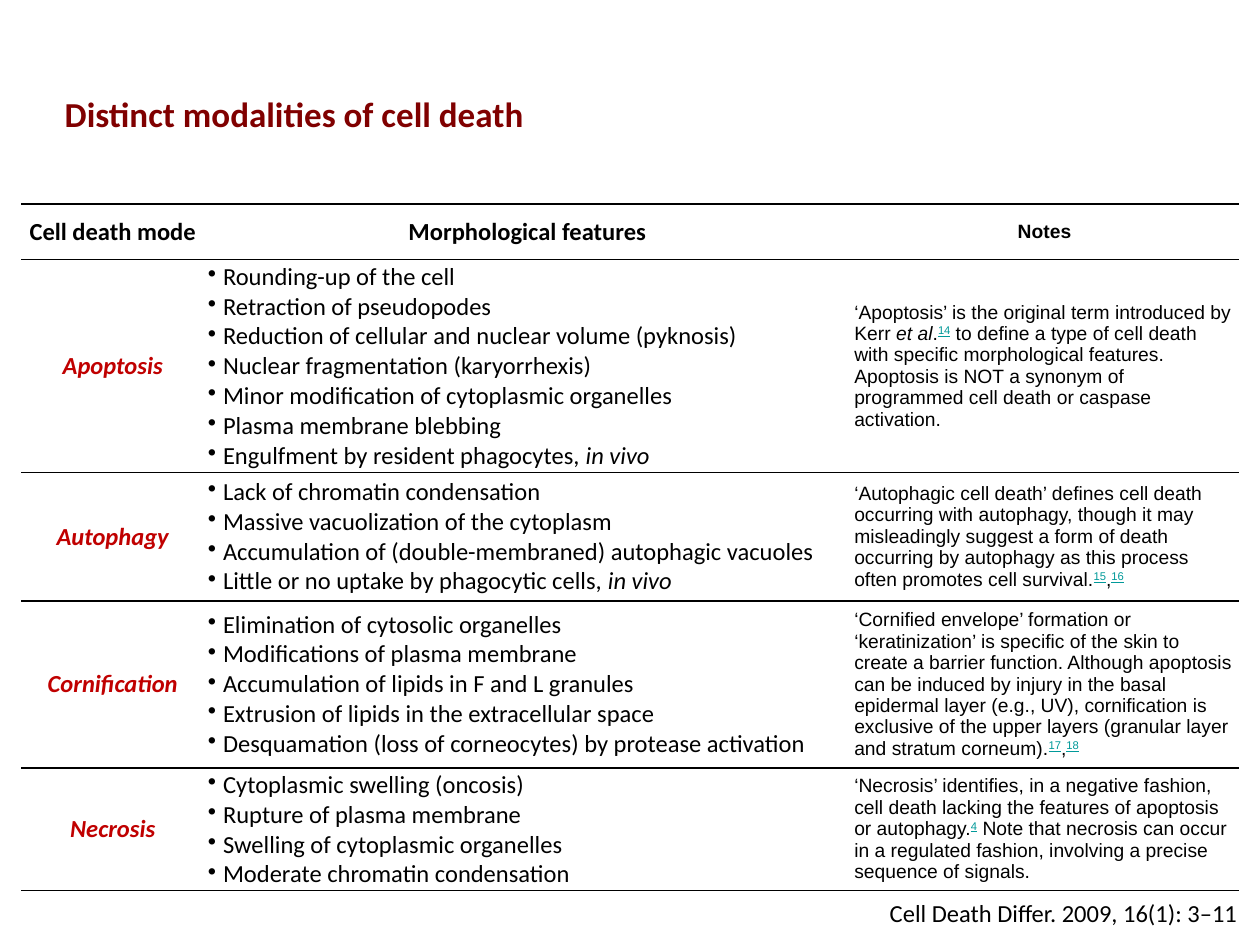
from dataclasses import dataclass

from lxml import etree
from pptx import Presentation
from pptx import util as u
from pptx.dml.color import RGBColor
from pptx.enum import text as t
from pptx.oxml import ns


@dataclass(frozen=True)
class Theme:
    """Colours, fonts and type sizes of the slide."""
    ink: str = "000000"
    title: str = "800000"
    mode: str = "C00000"
    link: str = "009999"
    main: str = "Calibri"
    note: str = "Arial"
    big: int = 20
    body: int = 14
    small: int = 11


THEME = Theme()
HEADS = ["Cell death mode", "Morphological features", "Notes"]
COLS = [1.45, 5.13, 3.08]
ROWS = [0.44, 1.69, 1.02, 1.26, 0.93]
MODES = [
    ("Apoptosis",
     ["Rounding-up of the cell",
      "Retraction of pseudopodes",
      "Reduction of cellular and nuclear volume (pyknosis)",
      "Nuclear fragmentation (karyorrhexis)",
      "Minor modification of cytoplasmic organelles",
      "Plasma membrane blebbing",
      "Engulfment by resident phagocytes, |_in vivo"],
     "‘Apoptosis’ is the original term introduced by Kerr |_et al|.|^14"
     "| to define a type of cell death with specific morphological features. "
     "Apoptosis is NOT a synonym of programmed cell death or caspase activation."),
    ("Autophagy",
     ["Lack of chromatin condensation",
      "Massive vacuolization of the cytoplasm",
      "Accumulation of (double-membraned) autophagic vacuoles",
      "Little or no uptake by phagocytic cells, |_in vivo"],
     "‘Autophagic cell death’ defines cell death occurring with autophagy, "
     "though it may misleadingly suggest a form of death occurring by autophagy "
     "as this process often promotes cell survival.|^15|,|^16"),
    ("Cornification",
     ["Elimination of cytosolic organelles",
      "Modifications of plasma membrane",
      "Accumulation of lipids in F and L granules",
      "Extrusion of lipids in the extracellular space",
      "Desquamation (loss of corneocytes) by protease activation"],
     "‘Cornified envelope’ formation or ‘keratinization’ is specific of the skin "
     "to create a barrier function. Although apoptosis can be induced by injury "
     "in the basal epidermal layer (e.g., UV), cornification is exclusive of the "
     "upper layers (granular layer and stratum corneum).|^17|,|^18"),
    ("Necrosis",
     ["Cytoplasmic swelling (oncosis)",
      "Rupture of plasma membrane",
      "Swelling of cytoplasmic organelles",
      "Moderate chromatin condensation"],
     "‘Necrosis’ identifies, in a negative fashion, cell death lacking the "
     "features of apoptosis or autophagy.|^4| Note that necrosis can occur in a "
     "regulated fashion, involving a precise sequence of signals."),
]


def style(para, face, size, color, bold=False, italic=False, align=t.PP_ALIGN.LEFT):
    """Set the font and alignment of a paragraph."""
    font = para.font
    font.name, font.size, font.bold, font.italic = face, u.Pt(size), bold, italic
    font.color.rgb = RGBColor.from_string(color)
    para.alignment = align


def write(para, words):
    """Add runs split at bars; _ marks italics and ^ a reference."""
    for part in words.split("|"):
        run = para.add_run()
        run.text = part.lstrip("_^")
        if part.startswith("_"):
            run.font.italic = True
        elif part.startswith("^"):
            run.font.underline = True
            run.font.color.rgb = RGBColor.from_string(THEME.link)
            run.font._element.set("baseline", "30000")


def bullet(para):
    """Give a paragraph a hanging bullet."""
    props = para._p.get_or_add_pPr()
    props.set("marL", str(u.Inches(0.12)))
    props.set("indent", str(u.Inches(-0.12)))
    mark = etree.Element(ns.qn("a:buChar"), char="•")
    props.insert_element_before(mark, "a:tabLst", "a:defRPr", "a:extLst")


def frame(cell):
    """Rule a cell above and below, and clear its fill."""
    cell.fill.background()
    cell.vertical_anchor = t.MSO_ANCHOR.MIDDLE
    cell.margin_left = cell.margin_right = u.Inches(0.03)
    cell.margin_top = cell.margin_bottom = u.Inches(0.02)
    props = cell._tc.get_or_add_tcPr()
    for spot, side in enumerate("LRTB"):
        line = etree.Element(ns.qn("a:ln" + side), w=str(u.Pt(1)))
        if side in "TB":
            fill = etree.SubElement(line, ns.qn("a:solidFill"))
            etree.SubElement(fill, ns.qn("a:srgbClr"), val=THEME.ink)
        else:
            etree.SubElement(line, ns.qn("a:noFill"))
        props.insert(spot, line)


def add_title(slide, box):
    """Place the slide title."""
    shape = slide.shapes.title
    shape.left, shape.top, shape.width, shape.height = map(u.Inches, box)
    body = shape.text_frame
    body.text = "Distinct modalities of cell death"
    body.word_wrap, body.auto_size = False, t.MSO_AUTO_SIZE.SHAPE_TO_FIT_TEXT
    style(body.paragraphs[0], THEME.main, THEME.big, THEME.title, True,
          align=t.PP_ALIGN.CENTER)


def add_modes(slide, box):
    """Place the table of cell death modes."""
    table = slide.shapes.add_table(len(ROWS), len(COLS), *map(u.Inches, box)).table
    table.first_row = table.horz_banding = False
    for col, width in zip(table.columns, COLS):
        col.width = u.Inches(width)
    for row, height in zip(table.rows, ROWS):
        row.height = u.Inches(height)
    for cell in table.iter_cells():
        frame(cell)
    mid = t.PP_ALIGN.CENTER
    looks = [(THEME.main, THEME.body), (THEME.main, THEME.body),
             (THEME.note, THEME.small)]
    for cell, head, look in zip(table.rows[0].cells, HEADS, looks):
        cell.text = head
        style(cell.text_frame.paragraphs[0], *look, THEME.ink, True, align=mid)
    for row, (mode, traits, note) in enumerate(MODES, 1):
        name, list_, notes = (cell.text_frame for cell in table.rows[row].cells)
        name.text = mode
        style(name.paragraphs[0], *looks[0], THEME.mode, True, True, mid)
        for at, trait in enumerate(traits):
            para = list_.add_paragraph() if at else list_.paragraphs[0]
            style(para, *looks[1], THEME.ink)
            bullet(para)
            write(para, trait)
        style(notes.paragraphs[0], *looks[2], THEME.ink)
        write(notes.paragraphs[0], note)


def add_cite(slide, box):
    """Place the citation."""
    body = slide.shapes.add_textbox(*map(u.Inches, box)).text_frame
    body.word_wrap, body.auto_size = True, t.MSO_AUTO_SIZE.SHAPE_TO_FIT_TEXT
    body.text = "Cell Death Differ. 2009, 16(1): 3–11"
    style(body.paragraphs[0], THEME.main, THEME.body, THEME.ink,
          align=t.PP_ALIGN.RIGHT)


def main():
    """Build and save the slide."""
    deck = Presentation()
    deck.slide_width, deck.slide_height = u.Inches(10), u.Inches(7.5)
    slide = deck.slides.add_slide(deck.slide_layouts[5])
    add_modes(slide, (0.17, 1.62, sum(COLS), sum(ROWS)))
    add_cite(slide, (4.92, 7.08, 5, 0.34))
    add_title(slide, (0.4, 0.68, 3.87, 0.44))
    deck.save("out.pptx")


if __name__ == "__main__":
    main()
